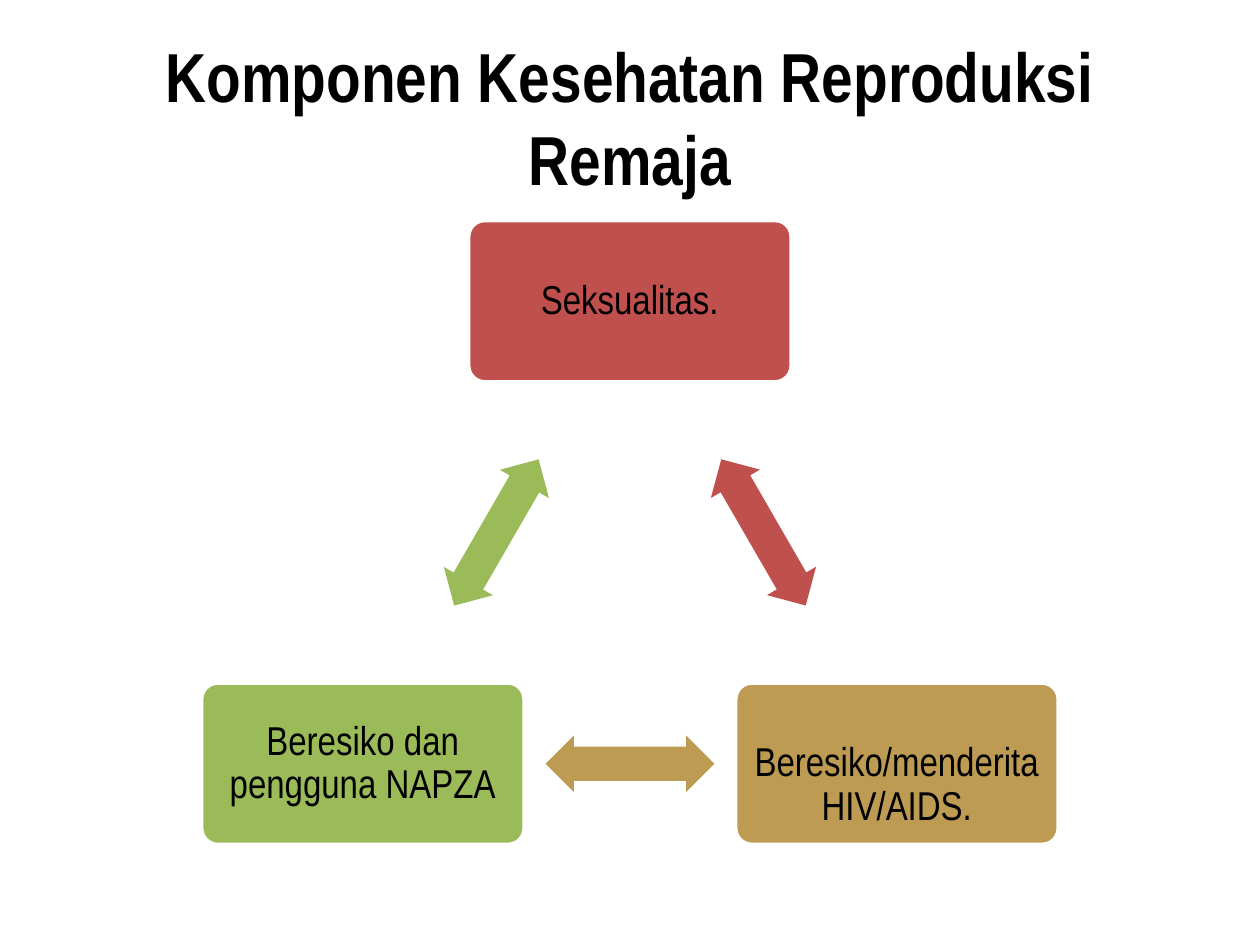
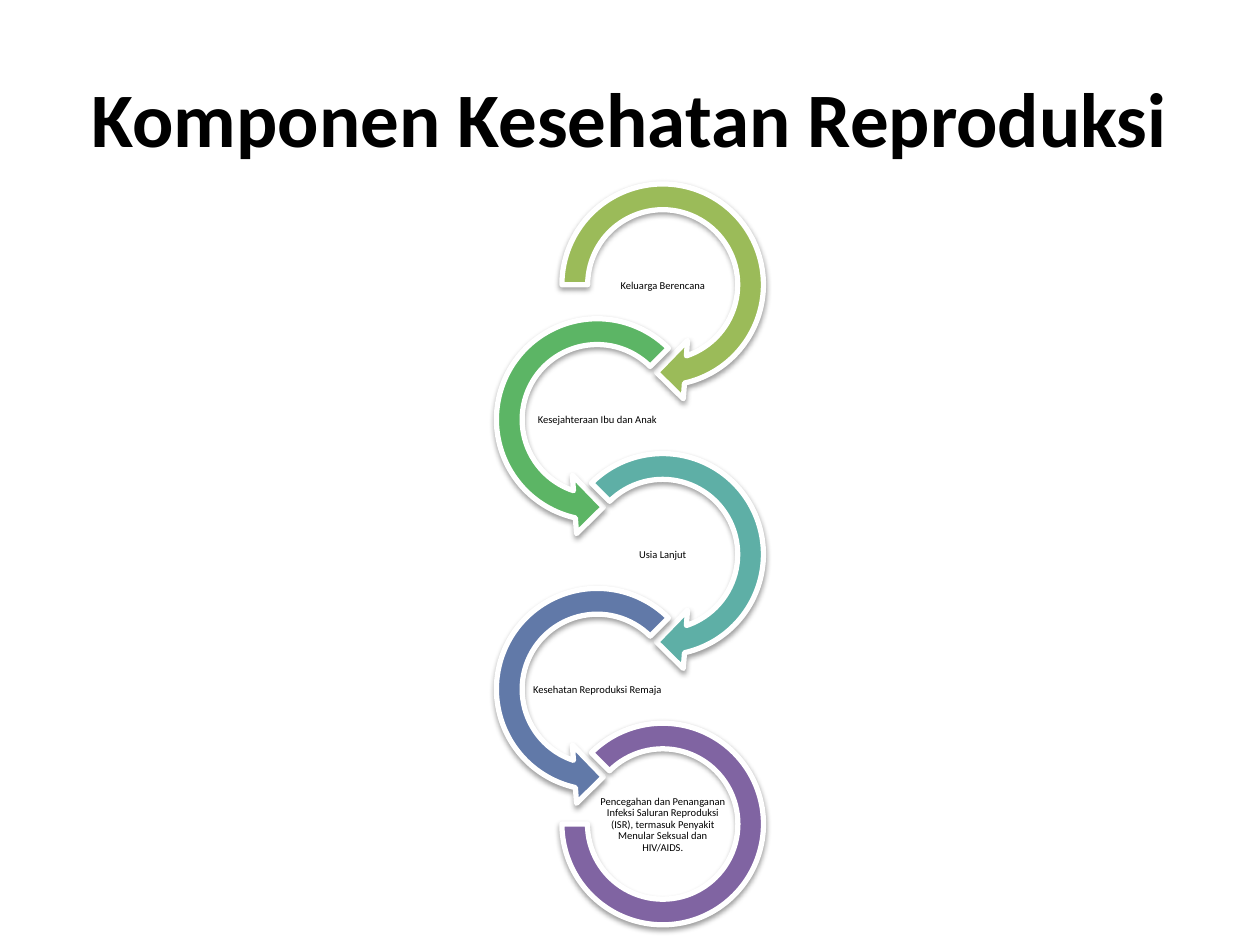
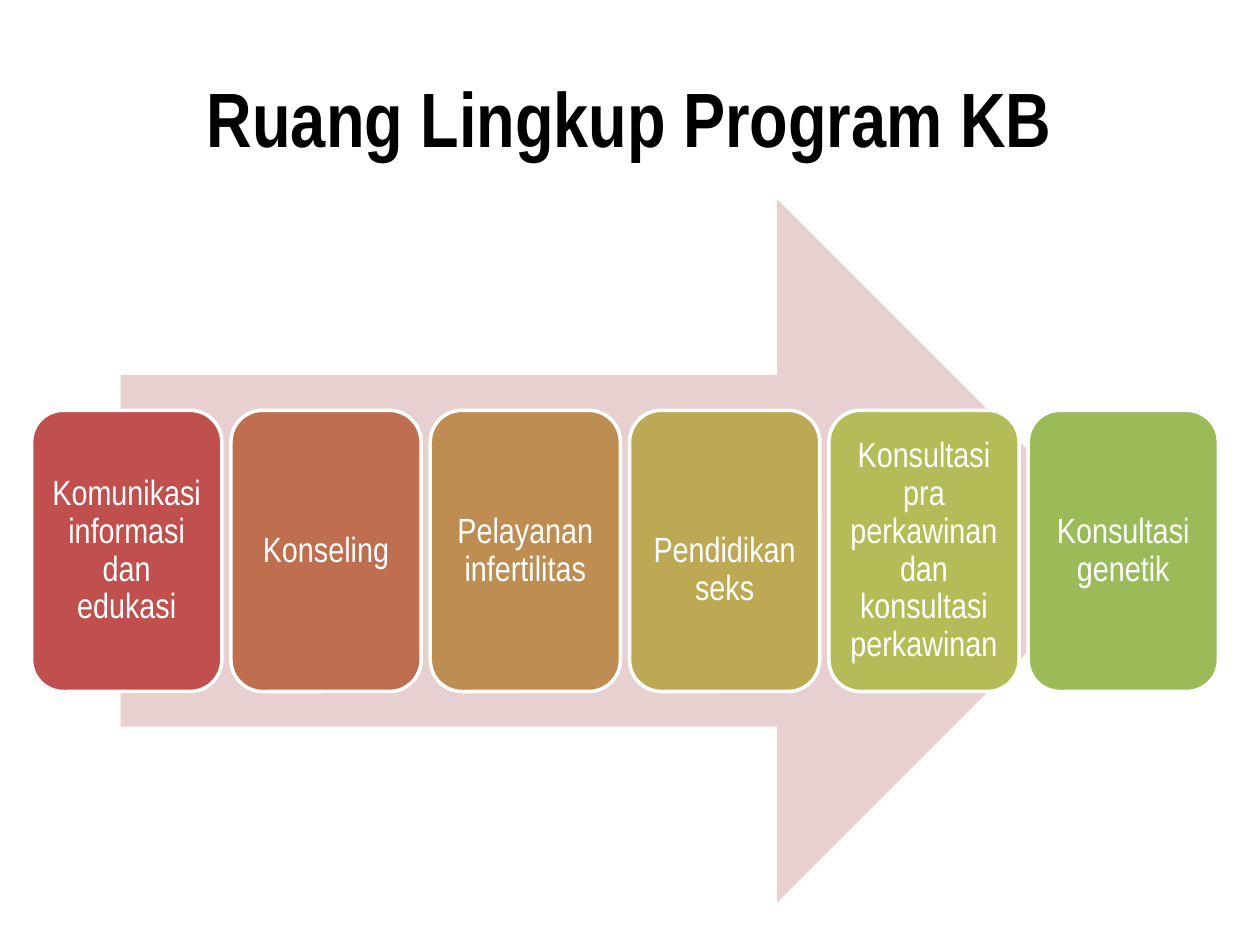
import math
from dataclasses import dataclass

from lxml import etree
from pptx import Presentation
from pptx.dml.color import RGBColor
from pptx.enum import shapes, text
from pptx.oxml import ns
from pptx.util import Pt


@dataclass(frozen=True)
class Theme:
    black: str = "000000"
    white: str = "FFFFFF"
    red: str = "C0504D"
    gold: str = "BD9B53"
    green: str = "9BBB59"
    pale_red: str = "E8D0D0"
    narrow: str = "Arial Narrow"
    calibri: str = "Calibri"
    title_size: float = 44
    long_title_size: float = 39.6
    cycle_size: float = 23
    step_size: float = 20
    ring_size: float = 6


THEME = Theme()
SHAPE = shapes.MSO_SHAPE


@dataclass(frozen=True)
class Box:
    """A rectangle given by its centre, in points."""
    x: float
    y: float
    width: float
    height: float

    def lengths(self):
        return (Pt(self.x - self.width / 2), Pt(self.y - self.height / 2),
                Pt(self.width), Pt(self.height))


@dataclass(frozen=True)
class Label:
    text: str
    colour: str
    lowered: bool = False  # sits half a line below the middle


@dataclass(frozen=True)
class Ring:
    text: str
    colour: str
    kind: SHAPE
    adjustments: tuple[float, ...]


def clockwise(start: float) -> tuple[float, ...]:
    return 0.11, 11.42, 45, start, 0.125


COUNTER_CLOCKWISE = (0.11, 11.42, 63, 189, 0.125)

CYCLE = [
    Label("Seksualitas.", THEME.red),
    Label("Beresiko/menderita HIV/AIDS.", THEME.gold, lowered=True),
    Label("Beresiko dan pengguna NAPZA", THEME.green),
]

RINGS = [
    Ring("Keluarga Berencana", THEME.green, SHAPE.CIRCULAR_ARROW, clockwise(108)),
    Ring("Kesejahteraan Ibu dan Anak", "5CB565", SHAPE.LEFT_CIRCULAR_ARROW,
         COUNTER_CLOCKWISE),
    Ring("Usia Lanjut", "5EAFA6", SHAPE.CIRCULAR_ARROW, clockwise(135)),
    Ring("Kesehatan Reproduksi Remaja", "6179A8", SHAPE.LEFT_CIRCULAR_ARROW,
         COUNTER_CLOCKWISE),
    Ring("Pencegahan dan Penanganan Infeksi Saluran Reproduksi (ISR), "
         "termasuk Penyakit Menular Seksual dan HIV/AIDS.",
         "8064A2", SHAPE.BLOCK_ARC, (135, 108, 0.127)),
]

STEPS = [
    Label("Komunikasi informasi dan edukasi", THEME.red),
    Label("Konseling", "BF6F4F"),
    Label("Pelayanan infertilitas", "BE8D52"),
    Label("Pendidikan seks", "BDA954", lowered=True),
    Label("Konsultasi pra perkawinan dan konsultasi perkawinan", "B5BC57"),
    Label("Konsultasi genetik", THEME.green),
]


def style_font(font, name: str, size: float, colour: str, bold: bool = False) -> None:
    font.name = name
    font.size = Pt(size)
    font.bold = bold
    font.color.rgb = RGBColor.from_string(colour)


def add_titled_slide(presentation, title: str, font: str, size: float):
    slide = presentation.slides.add_slide(presentation.slide_layouts[5])
    shape = slide.shapes.title
    shape.left, shape.top, shape.width, shape.height = Box(360, 66.6, 648, 90).lengths()
    frame = shape.text_frame
    frame.text = title
    frame.auto_size = text.MSO_AUTO_SIZE.NONE
    frame.vertical_anchor = text.MSO_ANCHOR.MIDDLE
    paragraph = frame.paragraphs[0]
    paragraph.alignment = text.PP_ALIGN.CENTER
    style_font(paragraph.font, font, size, THEME.black, bold=True)
    return slide


def add_filled(slide, kind: SHAPE, box: Box, colour: str, outline: float = 0,
               adjustments: tuple[float, ...] = ()):
    """Add a flat shape; a non-zero outline is the width of a white border."""
    shape = slide.shapes.add_shape(kind, *box.lengths())
    shape.shadow.inherit = False
    shape.fill.solid()
    shape.fill.fore_color.rgb = RGBColor.from_string(colour)
    if outline:
        shape.line.width = Pt(outline)
        shape.line.color.rgb = RGBColor.from_string(THEME.white)
    else:
        shape.line.fill.background()
    for index, value in enumerate(adjustments):
        shape.adjustments[index] = value
    return shape


def write_centred(shape, words: str, font: str, size: float, colour: str,
                  margin: float = 0, lowered: bool = False) -> None:
    frame = shape.text_frame
    frame.word_wrap = True
    frame.vertical_anchor = text.MSO_ANCHOR.MIDDLE
    frame.margin_left = frame.margin_right = frame.margin_bottom = Pt(margin)
    frame.margin_top = Pt(margin + (1.08 * size if lowered else 0))
    frame.text = words
    paragraph = frame.paragraphs[0]
    paragraph.alignment = text.PP_ALIGN.CENTER
    paragraph.line_spacing = 0.9
    style_font(paragraph.font, font, size, colour)


def add_soft_shadow(shape) -> None:
    effects = shape._element.spPr.find(ns.qn("a:effectLst"))
    shadow = etree.SubElement(effects, ns.qn("a:outerShdw"), blurRad=str(Pt(3.1)),
                              dist=str(Pt(1.6)), dir="5400000", rotWithShape="0")
    colour = etree.SubElement(shadow, ns.qn("a:srgbClr"), val=THEME.black)
    etree.SubElement(colour, ns.qn("a:alpha"), val="38000")


def build_cycle_slide(presentation) -> None:
    slide = add_titled_slide(presentation, "Komponen Kesehatan Reproduksi Remaja",
                             THEME.narrow, THEME.long_title_size)
    radius, turn = 176.2, 360 / len(CYCLE)
    angles = [math.radians(turn * index - 90) for index in range(len(CYCLE))]
    centres = [(360 + radius * math.cos(angle), 348.3 + radius * math.sin(angle))
               for angle in angles]
    for index, (label, (x, y)) in enumerate(zip(CYCLE, centres)):
        card = add_filled(slide, SHAPE.ROUNDED_RECTANGLE, Box(x, y, 184.3, 92.2),
                          label.colour, outline=2, adjustments=(0.1,))
        write_centred(card, label.text, THEME.narrow, THEME.cycle_size, THEME.black,
                      margin=7.2, lowered=label.lowered)
        next_x, next_y = centres[(index + 1) % len(centres)]
        arrow = add_filled(slide, SHAPE.LEFT_RIGHT_ARROW,
                           Box((x + next_x) / 2, (y + next_y) / 2, 96.5, 32.4),
                           label.colour, adjustments=(0.6, 0.5))
        arrow.rotation = turn / 2 + turn * index


def build_rings_slide(presentation) -> None:
    slide = add_titled_slide(presentation, "Komponen Kesehatan Reproduksi",
                             THEME.calibri, THEME.title_size)
    for index, ring in enumerate(RINGS):
        x, y = (341.3 if index % 2 else 378.7), 162.7 + 77.05 * index
        side = 115.2 if ring.kind == SHAPE.BLOCK_ARC else 133.9
        arc = add_filled(slide, ring.kind, Box(x, y, side, side), ring.colour,
                         outline=3, adjustments=ring.adjustments)
        add_soft_shadow(arc)
        caption = slide.shapes.add_textbox(*Box(x, y + 0.5, 74.9, 37.4).lengths())
        write_centred(caption, ring.text, THEME.calibri, THEME.ring_size, THEME.black)


def build_steps_slide(presentation) -> None:
    slide = add_titled_slide(presentation, "Ruang Lingkup Program KB",
                             THEME.narrow, THEME.title_size)
    middle = 314.8
    add_filled(slide, SHAPE.RIGHT_ARROW, Box(357, middle, 576, 402), THEME.pale_red)
    for index, step in enumerate(STEPS):
        card = add_filled(slide, SHAPE.ROUNDED_RECTANGLE,
                          Box(72.4 + 113.9 * index, middle, 108.7, 160.7),
                          step.colour, outline=2)
        write_centred(card, step.text, THEME.narrow, THEME.step_size, THEME.white,
                      margin=5.76, lowered=step.lowered)


def main() -> None:
    presentation = Presentation()
    presentation.slide_width, presentation.slide_height = Pt(720), Pt(540)
    build_cycle_slide(presentation)
    build_rings_slide(presentation)
    build_steps_slide(presentation)
    presentation.save("out.pptx")


if __name__ == "__main__":
    main()
